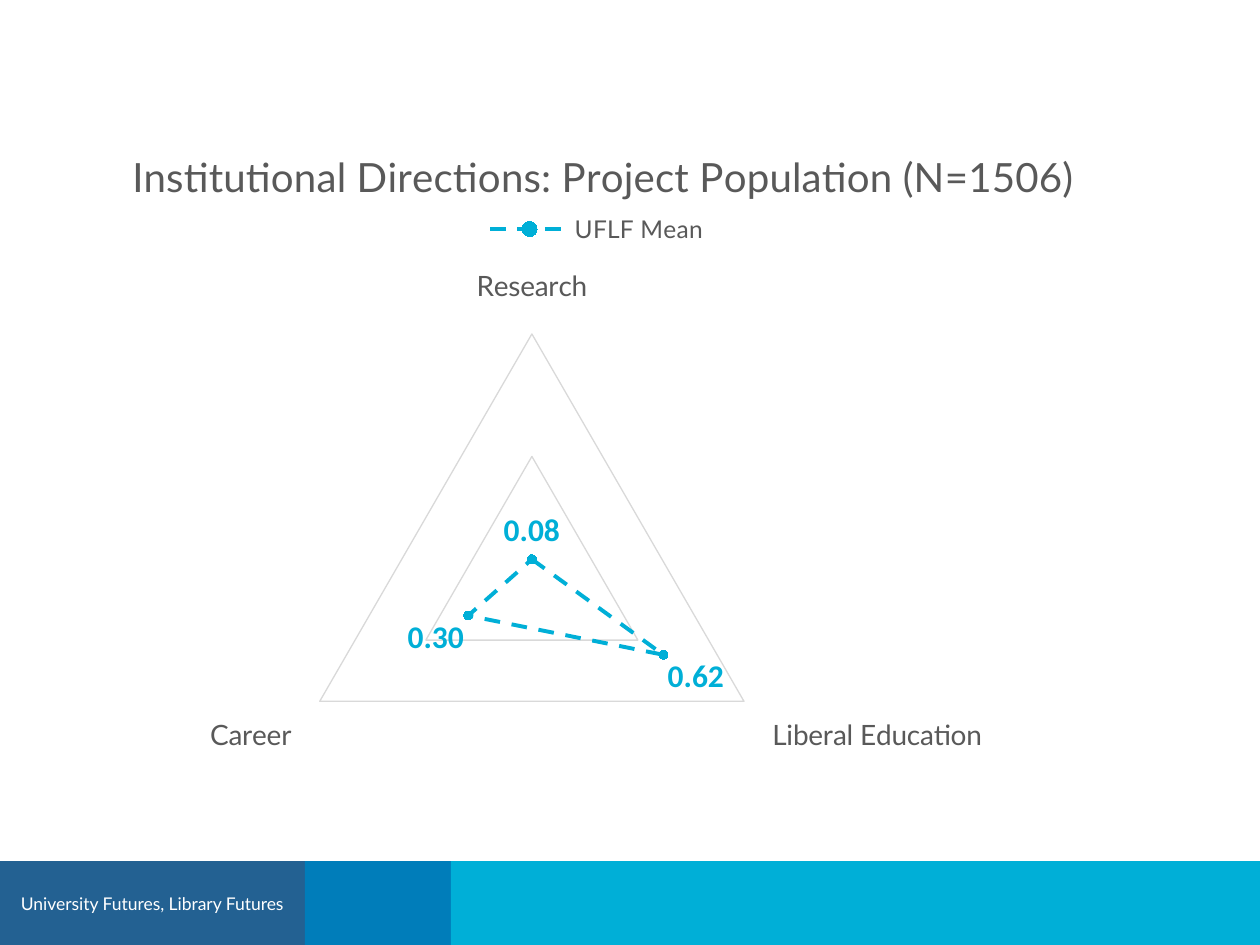
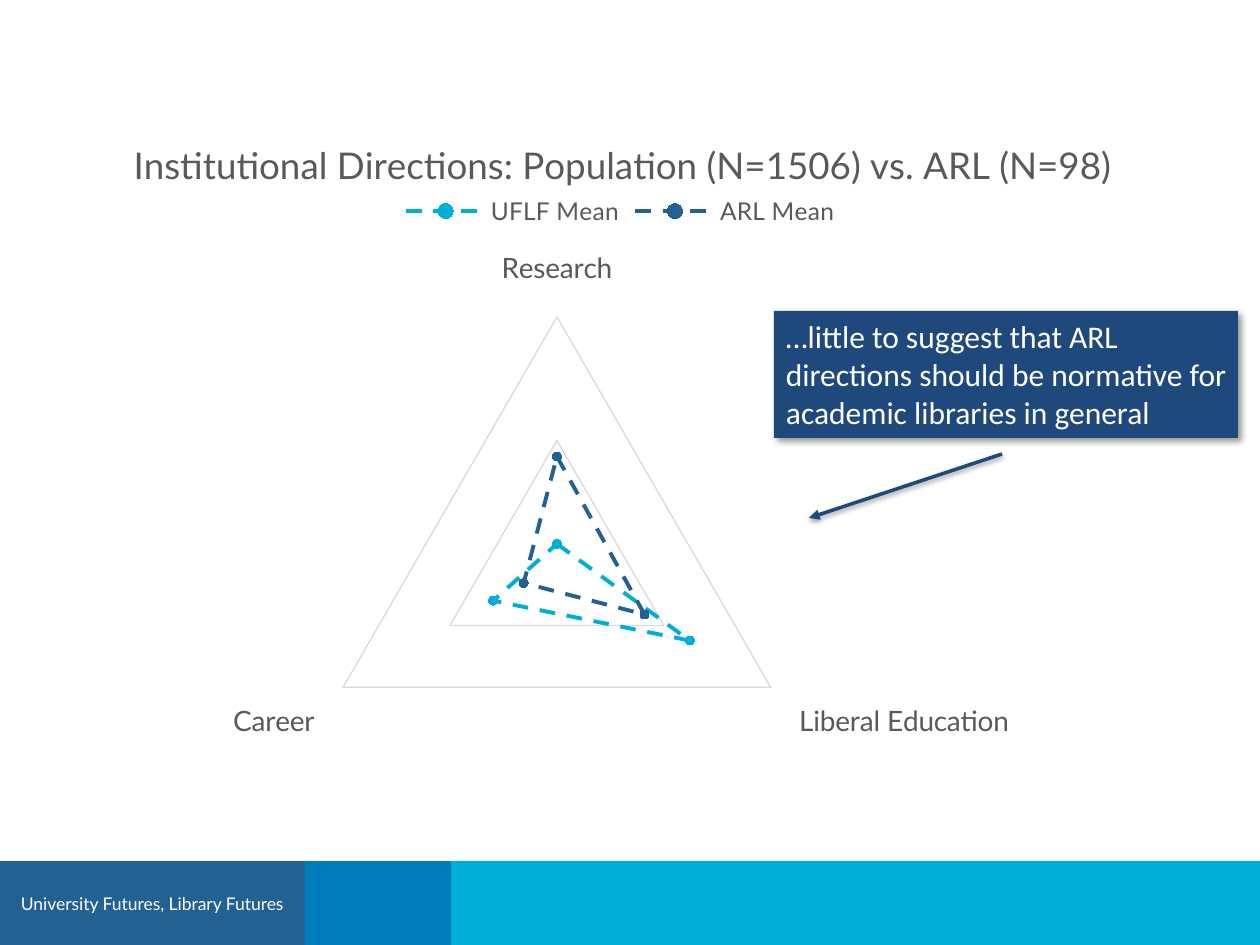
from pptx import Presentation
from pptx.chart.data import CategoryChartData
from pptx.dml.color import RGBColor
from pptx.enum.chart import XL_CHART_TYPE as CT, XL_LEGEND_POSITION as LP
from pptx.enum.chart import XL_MARKER_STYLE as MS, XL_TICK_MARK as TM
from pptx.enum.dml import MSO_LINE_DASH_STYLE as DASH
from pptx.enum.shapes import MSO_CONNECTOR as CONN, MSO_SHAPE as SHAPE
from pptx.enum.text import MSO_ANCHOR as ANCHOR, PP_ALIGN as ALIGN
from pptx.oxml.ns import qn
from pptx.util import Pt
from lxml.etree import SubElement

EMU_PER_PX = 914400 / 126
NAVY, BLUE, CYAN = "236192", "007DBA", "00AFD7"
DEEP, GREY, GRID, WHITE = "1F497D", "595959", "D9D9D9", "FFFFFF"
CATEGORIES = ["Research", "Liberal Education", "Career"]


def px(n):
    return round(n * EMU_PER_PX)


def rgb(value):
    return RGBColor.from_string(value)


def style_font(font, size, color=GREY, name="Lato", bold=False):
    font.size, font.name, font.bold = Pt(size), name, bold
    font.color.rgb = rgb(color)


def write(p, text, **fmt):
    r = p.add_run()
    r.text = text
    style_font(r.font, **fmt)


def style_line(line, color, width):
    line.color.rgb = rgb(color)
    line.width = Pt(width)


def place(parent, frame, left, top, width=None, height=None, inner=False):
    layout = parent.find(qn("c:layout"))
    if layout is None:
        layout = SubElement(parent, qn("c:layout"))
        parent.insert(1, layout)
    manual = SubElement(layout, qn("c:manualLayout"))
    x, y, w, h = frame
    items = [("xMode", "edge"), ("yMode", "edge"),
             ("x", (left - x) / w), ("y", (top - y) / h)]
    if inner:
        items.insert(0, ("layoutTarget", "inner"))
    if width:
        items += [("w", width / w), ("h", height / h)]
    for tag, val in items:
        SubElement(manual, qn("c:" + tag)).set("val", str(val))


def add_shadow(spPr, blur, dist, angle, alpha):
    effects = spPr.find(qn("a:effectLst"))
    if effects is None:
        effects = SubElement(spPr, qn("a:effectLst"))
    shadow = SubElement(effects, qn("a:outerShdw"), blurRad=str(Pt(blur)),
                        dist=str(Pt(dist)), dir=str(angle * 60000),
                        rotWithShape="0")
    color = SubElement(shadow, qn("a:srgbClr"), val="000000")
    SubElement(color, qn("a:alpha"), val=str(alpha * 1000))


class Deck:
    def __init__(self):
        self.prs = Presentation()
        self.prs.slide_width, self.prs.slide_height = px(1260), px(945)
        self.s = None

    def slide(self):
        self.s = self.prs.slides.add_slide(self.prs.slide_layouts[6])
        left = 0
        for right, color in ((305, NAVY), (451, BLUE), (1260, CYAN)):
            sp = self.rect(left, 861, right - left, 84, color)
            if left == 0:
                self.label(sp, "University Futures, Library Futures",
                           21, ANCHOR.MIDDLE, size=10, color=WHITE)
            left = right

    def rect(self, x, y, w, h, color):
        sp = self.s.shapes.add_shape(SHAPE.RECTANGLE, *map(px, (x, y, w, h)))
        sp.shadow.inherit = False
        sp.fill.solid()
        sp.fill.fore_color.rgb = rgb(color)
        sp.line.fill.background()
        return sp

    def label(self, sp, text, inset, anchor, **fmt):
        tf = sp.text_frame
        tf.word_wrap = True
        tf.vertical_anchor = anchor
        tf.margin_left, tf.margin_right = px(inset), px(10)
        tf.margin_top = tf.margin_bottom = px(6)
        p = tf.paragraphs[0]
        p.alignment = ALIGN.LEFT
        write(p, text, **fmt)

    def callout(self, x, y, w, h, text):
        sp = self.rect(x, y, w, h, DEEP)
        add_shadow(sp.element.spPr, 4, 3, 45, 40)
        self.label(sp, text, 12, ANCHOR.TOP,
                   size=18, color=WHITE, name="Calibri")

    def arrow(self, x1, y1, x2, y2):
        line = self.s.shapes.add_connector(
            CONN.STRAIGHT, *map(px, (x1, y1, x2, y2)))
        style_line(line.line, DEEP, 2)
        SubElement(line.line._get_or_add_ln(), qn("a:tailEnd"),
                   type="triangle")
        add_shadow(line.element.spPr, 3.1, 1.6, 90, 38)

    def radar(self, frame, title, title_size, title_at, legend_at,
              center, radius, top_value, series, labels=False):
        data = CategoryChartData(number_format="General")
        data.categories = CATEGORIES
        for name, values, _ in series:
            data.add_series(name, values)
        chart = self.s.shapes.add_chart(
            CT.RADAR_MARKERS, *map(px, frame), data).chart
        style_font(chart.font, 10, "000000")

        chart.has_title = True
        write(chart.chart_title.text_frame.paragraphs[0], title,
              size=title_size)
        place(chart.chart_title.element, frame, *title_at)
        chart.has_legend = True
        chart.legend.position = LP.TOP
        chart.legend.include_in_layout = False
        style_font(chart.legend.font, 14)
        place(chart.legend._element, frame, *legend_at)
        plot_area = chart.element.find(".//" + qn("c:plotArea"))
        place(plot_area, frame, center[0] - radius, center[1] - radius,
              2 * radius, 2 * radius, inner=True)

        cat, val = chart.category_axis, chart.value_axis
        cat.has_major_gridlines = False
        cat.major_tick_mark = TM.NONE
        style_font(cat.tick_labels.font, 16)
        style_line(cat.format.line, GRID, 0.75)
        val.visible = False
        val.minimum_scale, val.maximum_scale = 0, top_value
        val.major_unit = top_value / 2
        val.has_major_gridlines = True
        style_line(val.major_gridlines.format.line, GRID, 0.75)

        for ser, (_, _, color) in zip(chart.plots[0].series, series):
            ser.smooth = False
            style_line(ser.format.line, color, 2.25)
            ser.format.line.dash_style = DASH.DASH
            ser.marker.style, ser.marker.size = MS.CIRCLE, 5
            ser.marker.format.fill.solid()
            ser.marker.format.fill.fore_color.rgb = rgb(color)
            style_line(ser.marker.format.line, color, 0.75)
            if labels:
                dl = ser.data_labels
                dl.show_value = True
                dl.number_format = "#,##0.00"
                dl.number_format_is_linked = False
                style_font(dl.font, 18, color, "Calibri", True)


def main():
    deck = Deck()

    deck.slide()
    deck.radar((-44, 105, 1281, 736),
               "Institutional Directions: Project Population (N=1506)", 23,
               (125, 140), (482, 209), (532, 579), 245, 1,
               [("UFLF Mean", (0.08, 0.62, 0.3), CYAN)], labels=True)

    deck.slide()
    deck.radar((-37, 103, 1315, 722),
               "Institutional Directions: Population (N=1506) vs. ARL (N=98)",
               21, (127, 132), (398, 191), (557, 564), 247, 161,
               [("UFLF Mean", (13, 100, 48), CYAN),
                ("ARL Mean", (70, 66, 25), NAVY)])
    deck.callout(774, 311, 464, 127,
                 "…little to suggest that ARL directions should be "
                 "normative for academic libraries in general")
    deck.arrow(1002, 454, 809, 518)

    deck.prs.save("out.pptx")


if __name__ == "__main__":
    main()
